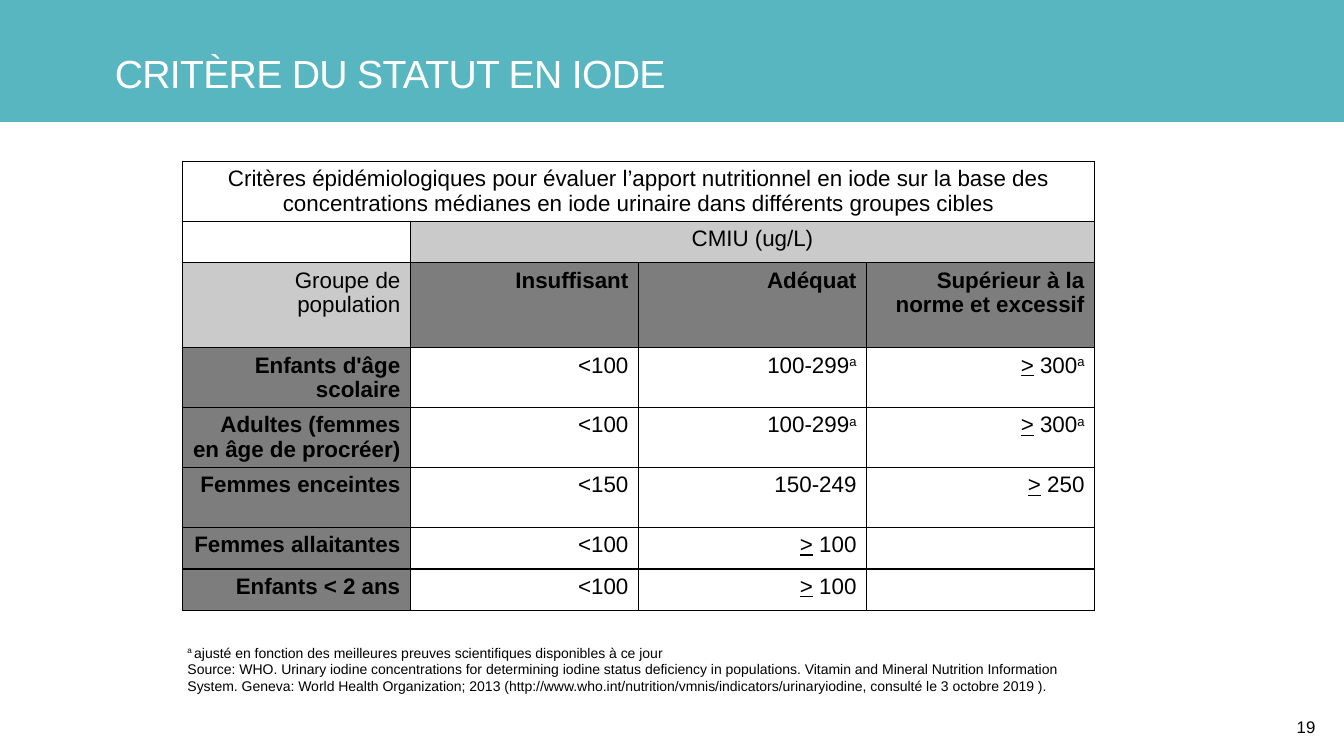
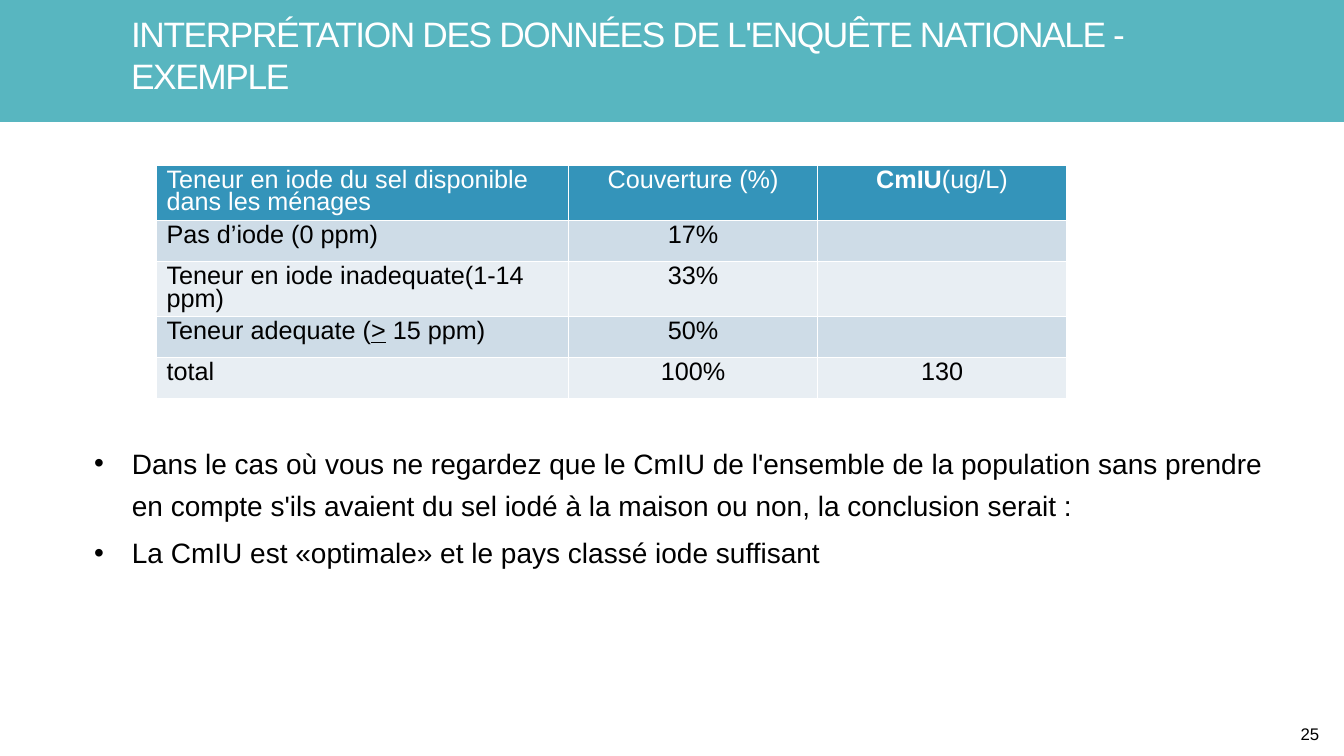
import pptx
import pptx.util
import pptx.dml.color
import pptx.enum.shapes
import pptx.enum.text
import pptx.oxml
import pptx.oxml.ns

Pt = pptx.util.Pt
Align = pptx.enum.text.PP_ALIGN
Anchor = pptx.enum.text.MSO_ANCHOR

BLACK, WHITE, TEAL, BLUE = "000000", "FFFFFF", "58B6C0", "3494BA"
LIGHT_GREY, DARK_GREY = "CACACA", "7D7D7D"
STRIPES = ("E8EEF3", "CEDCE7")


def color(value):
    return pptx.dml.color.RGBColor.from_string(value)


def element(markup):
    return pptx.oxml.parse_xml(markup.replace(">", f" {pptx.oxml.ns.nsdecls('a')}>", 1))


def at_least(value, *rest):
    return [(">", "u"), f" {value}", *rest]


class Slides:
    font = "Arial"

    def __init__(self):
        self.deck = pptx.Presentation()
        self.deck.slide_width, self.deck.slide_height = Pt(960), Pt(540)
        self.page = None

    def start(self, layout, title, place, size, tracking):
        self.page = self.deck.slides.add_slide(self.deck.slide_layouts[layout])
        band = self.page.shapes.add_shape(
            pptx.enum.shapes.MSO_SHAPE.RECTANGLE, 0, 0, Pt(960), Pt(87))
        band.shadow.inherit = False
        band.fill.solid()
        band.fill.fore_color.rgb = color(TEAL)
        band.line.fill.background()
        self.page.shapes._spTree.insert(2, band._element)
        box = self.page.shapes.title
        self.place(box, *place)
        frame = self.frame(box, 0, 0, Anchor.BOTTOM)
        para = frame.paragraphs[0]
        para.alignment = Align.LEFT
        for span in self.add_spans(para, [title], size, WHITE):
            span.font._element.set("spc", str(tracking))

    def place(self, box, left, top, width, height):
        box.left, box.top, box.width, box.height = map(Pt, (left, top, width, height))

    def frame(self, box, side, edge, anchor):
        frame = box.text_frame
        frame.word_wrap = True
        frame.auto_size = pptx.enum.text.MSO_AUTO_SIZE.NONE
        frame.vertical_anchor = anchor
        frame.margin_left = frame.margin_right = Pt(side)
        frame.margin_top = frame.margin_bottom = Pt(edge)
        return frame

    def add_spans(self, para, parts, size, ink, bold=False):
        spans = []
        for part in parts:
            words, mark = (part, "") if isinstance(part, str) else part
            span = para.add_run()
            span.text = words
            span.font.name, span.font.size = self.font, Pt(size)
            span.font.color.rgb = color(ink)
            span.font.bold = bold or mark == "b"
            span.font.underline = mark == "u"
            if mark == "sup":
                span.font._element.set("baseline", "30000")
            spans.append(span)
        return spans

    def text(self, place, paras, size, align=Align.LEFT, anchor=Anchor.TOP):
        box = self.page.shapes.add_textbox(*map(Pt, place))
        frame = self.frame(box, 3.6, 3.6, anchor)
        for index, parts in enumerate(paras):
            para = frame.add_paragraph() if index else frame.paragraphs[0]
            para.alignment = align
            self.add_spans(para, parts, size, BLACK)

    def number(self, value, right, middle):
        self.text((right - 40, middle - 11, 40, 22), [[value]], 12, Align.RIGHT, Anchor.MIDDLE)

    def bullets(self, place, items, size):
        box = self.page.placeholders[1]
        self.place(box, *place)
        frame = self.frame(box, 7.2, 3.6, Anchor.TOP)
        for index, item in enumerate(items):
            para = frame.add_paragraph() if index else frame.paragraphs[0]
            settings = para._p.get_or_add_pPr()
            settings.set("marL", str(Pt(27)))
            settings.set("indent", str(Pt(-27)))
            settings.append(element('<a:buChar char="•"></a:buChar>'))
            para.alignment = Align.LEFT
            para.line_spacing = 1.25
            para.space_before = Pt(4 if index else 0)
            self.add_spans(para, [item], size, BLACK)

    def table(self, corner, widths, heights, rows, look, size, border, spacing=1.0, merges=()):
        grid = self.page.shapes.add_table(
            len(heights), len(widths), *map(Pt, (*corner, sum(widths), sum(heights)))).table
        grid.horz_banding = False
        for column, width in zip(grid.columns, widths):
            column.width = Pt(width)
        for line, height in zip(grid.rows, heights):
            line.height = Pt(height)
        for first, last in merges:
            grid.cell(*first).merge(grid.cell(*last))
        for row, contents in enumerate(rows):
            for col in range(len(widths)):
                parts = contents[col] if col < len(contents) else []
                self.cell(grid.cell(row, col), parts, look(row, col), size, border, spacing)

    def cell(self, cell, parts, look, size, border, spacing):
        fill, ink, align, bold = look
        settings = cell._tc.get_or_add_tcPr()
        for side in "LRTB":
            settings.append(element(
                f'<a:ln{side} w="{Pt(1)}"><a:solidFill><a:srgbClr val="{border}"/>'
                f'</a:solidFill></a:ln{side}>'))
        cell.fill.solid()
        cell.fill.fore_color.rgb = color(fill)
        para = cell.text_frame.paragraphs[0]
        para.alignment, para.line_spacing = align, spacing
        self.add_spans(para, [parts] if isinstance(parts, str) else parts, size, ink, bold)


def criteria_look(row, col):
    heading = row == 2 and col > 0 or row > 2 and col == 0
    if heading:
        fill = DARK_GREY
    elif (row, col) == (2, 0) or row == 1 and col > 0:
        fill = LIGHT_GREY
    else:
        fill = WHITE
    return fill, BLACK, Align.CENTER if row < 2 else Align.RIGHT, heading


def survey_look(row, col):
    align = Align.CENTER if col else Align.LEFT
    return (STRIPES[row % 2], BLACK, align, False) if row else (BLUE, WHITE, align, False)


def criteria_page(slides):
    slides.start(5, "CRITÈRE DU STATUT EN IODE", (82, 3.6, 793, 65.5), 28, -50)
    note = ("a", "sup")
    rows = [
        ["Critères épidémiologiques pour évaluer l’apport nutritionnel en iode sur la base des "
         "concentrations médianes en iode urinaire dans différents groupes cibles"],
        [[], "CMIU (ug/L)"],
        ["Groupe de population", "Insuffisant", "Adéquat", "Supérieur à la norme et excessif"],
        ["Enfants d'âge scolaire", "<100", ["100-299", note], at_least(300, note)],
        ["Adultes (femmes en âge de procréer)", "<100", ["100-299", note], at_least(300, note)],
        ["Femmes enceintes", "<150", "150-249", at_least(250)],
        ["Femmes allaitantes", "<100", at_least(100)],
        ["Enfants < 2 ans", "<100", at_least(100)],
    ]
    slides.table((130.3, 115.2), [162.9] * 4, [42.7, 29.8, 60.7, 42.8, 42.8, 42.6, 29.8, 29.6],
                 rows, criteria_look, 16, BLACK,
                 merges=[((0, 0), (0, 3)), ((1, 1), (1, 3))])
    slides.text((130.3, 456.5, 651.6, 55), [
        [("a ", "sup"),
         "ajusté en fonction des meilleures preuves scientifiques disponibles à ce jour"],
        ["Source: WHO. Urinary iodine concentrations for determining iodine status deficiency in "
         "populations. Vitamin and Mineral Nutrition Information System. Geneva: World Health "
         "Organization; 2013 (http://www.who.int/nutrition/vmnis/indicators/urinaryiodine, "
         "consulté le 3 octobre 2019 )."],
    ], 10)
    slides.number("19", 943.2, 519)


def survey_page(slides):
    slides.start(1, "INTERPRÉTATION DES DONNÉES DE L'ENQUÊTE NATIONALE - EXEMPLE",
                 (93.6, 3.6, 768, 65.5), 25.2, -100)
    rows = [
        ["Teneur en iode du sel disponible dans les ménages", "Couverture (%)",
         [("CmIU", "b"), "(ug/L)"]],
        ["Pas d’iode (0 ppm)", "17%"],
        ["Teneur en iode inadequate(1-14 ppm)", "33%"],
        [["Teneur adequate (", (">", "u"), " 15 ppm)"], "50%"],
        ["total", "100%", "130"],
    ]
    slides.table((111.8, 118), [294.4, 177.8, 177.8], [39.3, 29.3, 39.3, 29.3, 29.3],
                 rows, survey_look, 18, WHITE, spacing=0.8)
    slides.bullets((60, 309, 862, 151), [
        "Dans le cas où vous ne regardez que le CmIU de l'ensemble de la population sans prendre "
        "en compte s'ils avaient du sel iodé à la maison ou non, la conclusion serait :",
        "La CmIU est «optimale» et le pays classé iode suffisant",
    ], 20)
    slides.number("25", 946, 524)


def main():
    slides = Slides()
    criteria_page(slides)
    survey_page(slides)
    slides.deck.save("out.pptx")


if __name__ == "__main__":
    main()
